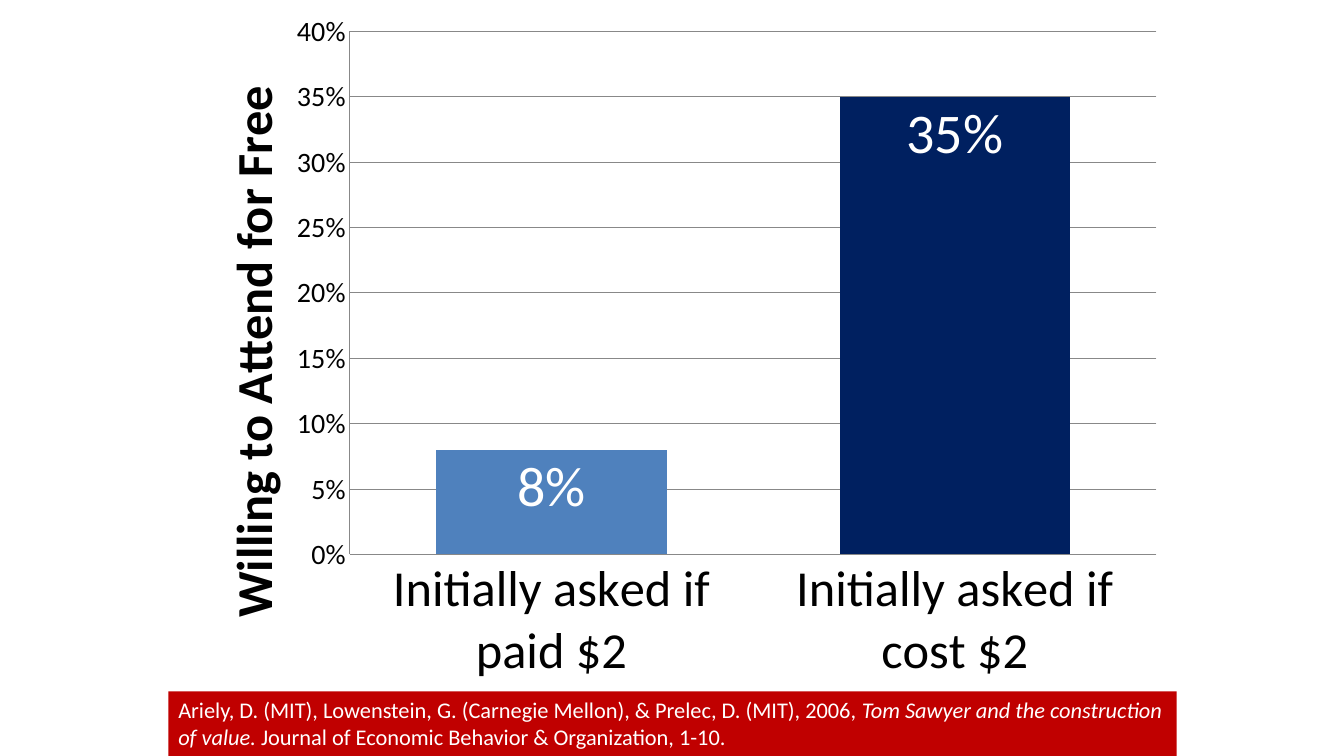
"""Build a slide with a column chart of willingness to attend and its citation."""
from dataclasses import dataclass

import lxml.etree
import pptx
import pptx.chart.data
import pptx.dml.color
import pptx.enum.chart
import pptx.enum.shapes
import pptx.enum.text
import pptx.oxml.ns
import pptx.util

Inches = pptx.util.Inches
qn = pptx.oxml.ns.qn
COLORS = {"black": "000000", "white": "FFFFFF", "paid": "4F81BD",
          "cost": "002060", "citation": "C00000", "line": "888888"}


@dataclass
class Bar:
    """One column of the chart."""
    category: str
    value: float
    color: str


@dataclass
class Run:
    """One stretch of the citation."""
    text: str
    italic: bool = False


BARS = [Bar("Initially asked if paid $2", 0.08, "paid"),
        Bar("Initially asked if cost $2", 0.35, "cost")]
CITATION = [
    Run("Ariely, D. (MIT), Lowenstein, G. (Carnegie Mellon), & Prelec, D. (MIT), 2006, "),
    Run("Tom Sawyer and the construction of value. ", True),
    Run("Journal of Economic Behavior & Organization, 1-10."),
]


def rgb(name: str) -> pptx.dml.color.RGBColor:
    """Return the named colour."""
    return pptx.dml.color.RGBColor.from_string(COLORS[name])


def set_attrs(target, **values) -> None:
    """Set each given attribute on the target."""
    for name, value in values.items():
        setattr(target, name, value)


def set_font(font, size: float, color: str = "black", **values) -> None:
    """Format a font."""
    set_attrs(font, name="Calibri", size=pptx.util.Pt(size), **values)
    font.color.rgb = rgb(color)


def set_fill(fill, color: str) -> None:
    """Give a solid fill."""
    fill.solid()
    fill.fore_color.rgb = rgb(color)


def set_layout(parent, index: int, **values) -> None:
    """Place a chart part by fractions of the chart area."""
    for old in parent.findall(qn("c:layout")):
        parent.remove(old)
    layout = lxml.etree.Element(qn("c:layout"))
    manual = lxml.etree.SubElement(layout, qn("c:manualLayout"))
    for tag, value in values.items():
        lxml.etree.SubElement(manual, qn(f"c:{tag}")).set("val", str(value))
    parent.insert(index, layout)


def add_bar_chart(s, bars: list[Bar]) -> None:
    """Draw the column chart."""
    data = pptx.chart.data.CategoryChartData(number_format="0%")
    data.categories = [bar.category for bar in bars]
    data.add_series("Series 1", [bar.value for bar in bars])
    chart = s.shapes.add_chart(
        pptx.enum.chart.XL_CHART_TYPE.COLUMN_CLUSTERED,
        Inches(1.67), Inches(0), Inches(10), Inches(6.92), data).chart
    set_attrs(chart, has_legend=False, has_title=False)
    set_font(chart.font, 10)
    set_layout(chart.element.find(f".//{qn('c:plotArea')}"), 0,
               layoutTarget="inner", xMode="edge", yMode="edge",
               x=0.18, y=0.045, w=0.8, h=0.75)

    cat_axis, val_axis = chart.category_axis, chart.value_axis
    for axis, size in ((cat_axis, 36), (val_axis, 20)):
        none = pptx.enum.chart.XL_TICK_MARK.NONE
        set_attrs(axis, major_tick_mark=none, minor_tick_mark=none)
        set_font(axis.tick_labels.font, size)
        axis.format.line.color.rgb = rgb("line")
    set_attrs(val_axis, minimum_scale=0, maximum_scale=0.4, major_unit=0.05,
              has_major_gridlines=True, has_title=True)
    val_axis.major_gridlines.format.line.color.rgb = rgb("line")
    set_attrs(val_axis.tick_labels, number_format="0%", number_format_is_linked=False)

    title = val_axis.axis_title
    p = title.text_frame.paragraphs[0]
    r = p.add_run()
    r.text = "Willing to Attend for Free"
    set_font(r.font, 36, bold=True)
    body = title.element.find(f".//{qn('a:bodyPr')}")
    body.set("rot", "-5400000")
    body.set("vert", "horz")
    set_layout(title.element, 1, xMode="edge", yMode="edge", x=0.04, y=0.11)

    plot = chart.plots[0]
    set_attrs(plot, gap_width=75, overlap=40, vary_by_categories=False)
    series = plot.series[0]
    set_fill(series.format.fill, bars[0].color)
    for i, bar in enumerate(bars[1:], 1):
        set_fill(series.points[i].format.fill, bar.color)
    labels = series.data_labels
    set_attrs(labels, show_value=True, number_format="0%", number_format_is_linked=False,
              position=pptx.enum.chart.XL_LABEL_POSITION.INSIDE_END)
    set_font(labels.font, 40, "white")


def add_citation(s, runs: list[Run]) -> None:
    """Draw the citation band."""
    sp = s.shapes.add_shape(pptx.enum.shapes.MSO_SHAPE.RECTANGLE,
                            Inches(1.67), Inches(6.86), Inches(10), Inches(0.64))
    sp.shadow.inherit = False
    set_fill(sp.fill, "citation")
    sp.line.fill.background()
    tf = sp.text_frame
    set_attrs(tf, word_wrap=True, vertical_anchor=pptx.enum.text.MSO_ANCHOR.TOP,
              auto_size=pptx.enum.text.MSO_AUTO_SIZE.SHAPE_TO_FIT_TEXT)
    p = tf.paragraphs[0]
    p.alignment = pptx.enum.text.PP_ALIGN.LEFT
    for run in runs:
        r = p.add_run()
        r.text = run.text
        set_font(r.font, 16, "white", italic=run.italic)


def main() -> None:
    """Build and save the slide."""
    prs = pptx.Presentation()
    set_attrs(prs, slide_width=Inches(13.33), slide_height=Inches(7.5))
    s = prs.slides.add_slide(prs.slide_layouts[6])
    add_bar_chart(s, BARS)
    add_citation(s, CITATION)
    prs.save("out.pptx")


if __name__ == "__main__":
    main()
